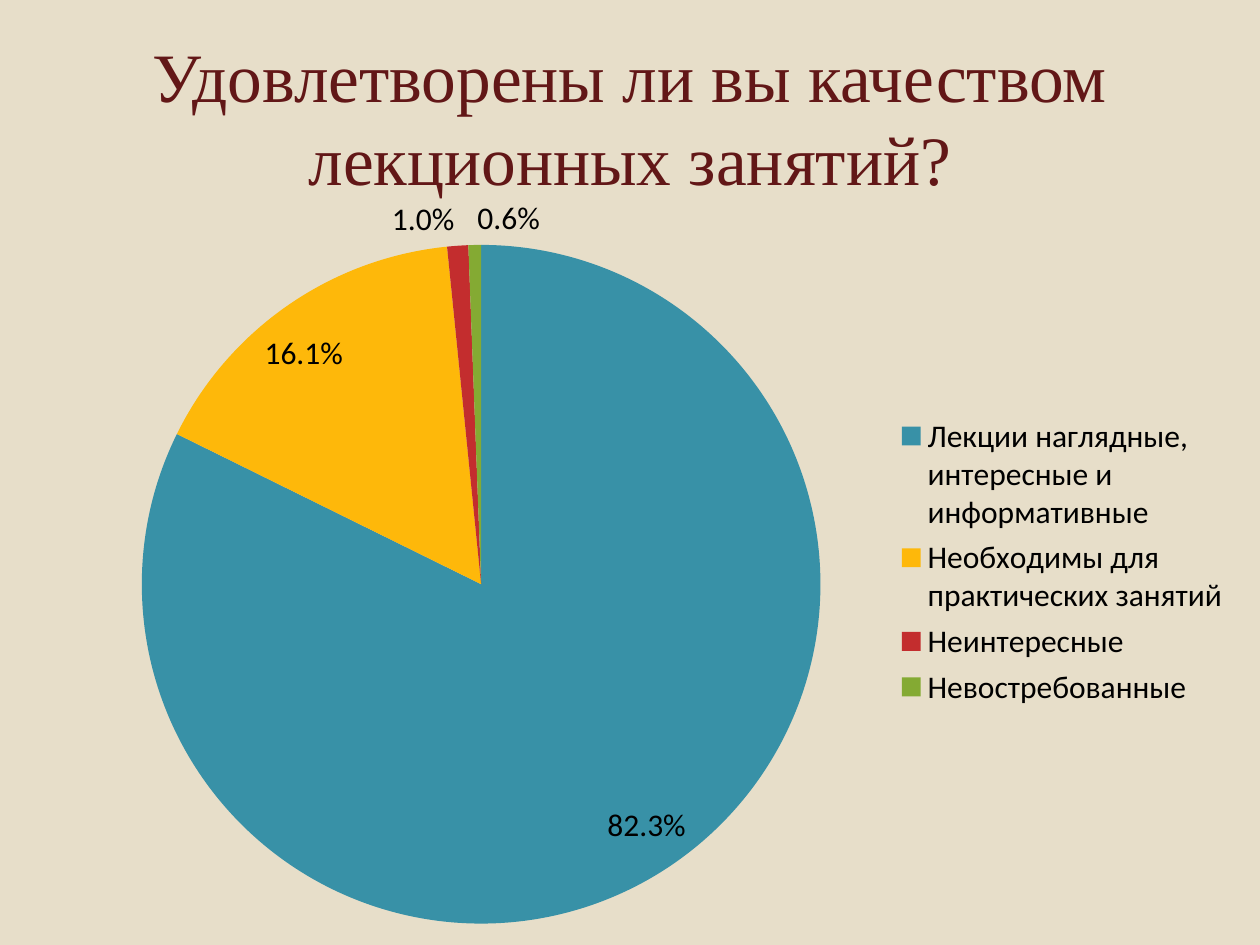
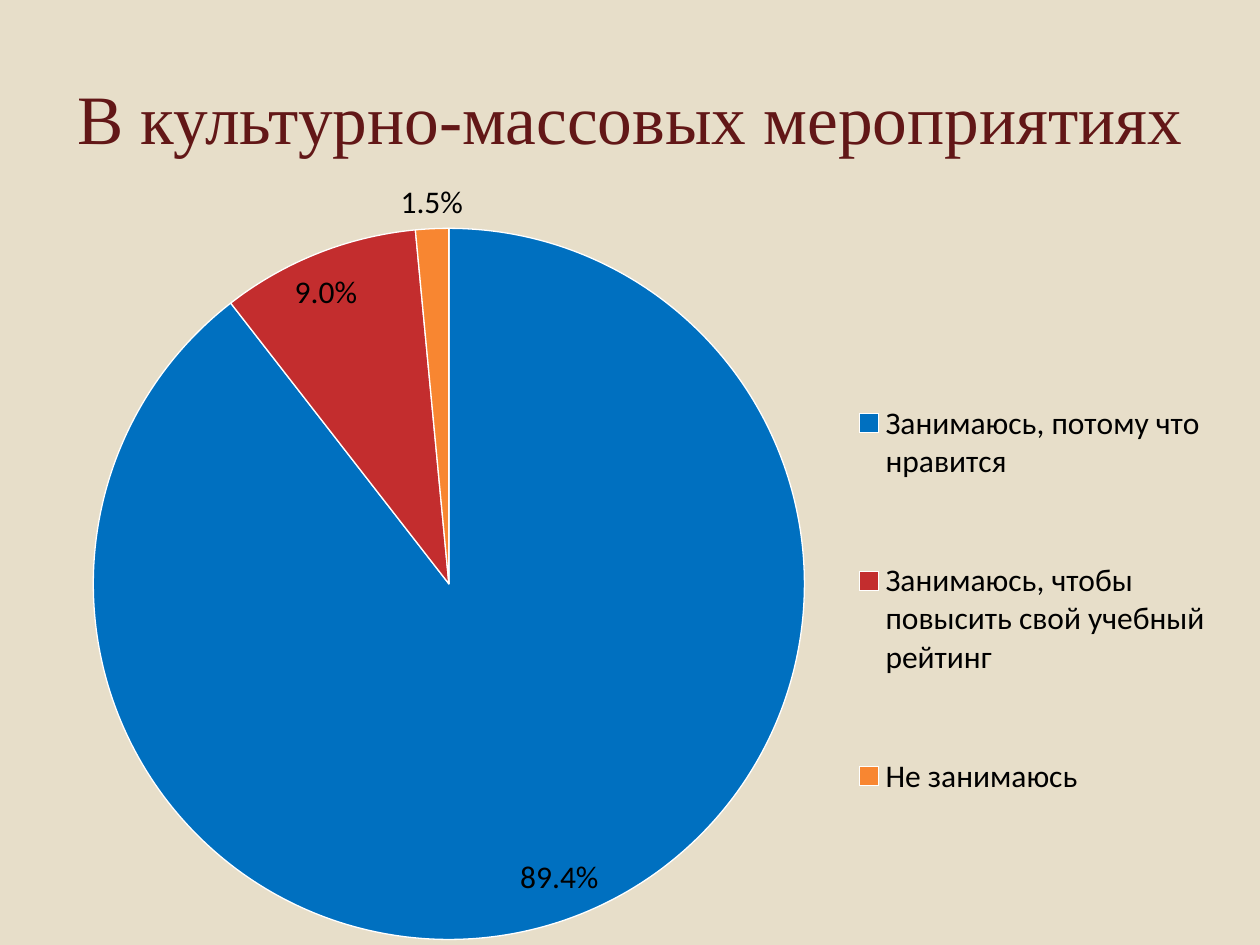
from lxml.etree import SubElement
from pptx import Presentation
from pptx.chart.data import CategoryChartData
from pptx.dml.color import RGBColor
from pptx.enum.chart import XL_CHART_TYPE, XL_LABEL_POSITION, XL_LEGEND_POSITION
from pptx.enum.text import MSO_ANCHOR, PP_ALIGN
from pptx.oxml.ns import qn
from pptx.util import Cm, Pt

BACKGROUND = "E7DEC9"
TITLE_COLOR = "621717"
CHART_TEXT = "000000"
SLICE_BORDER = "FFFFFF"

SURVEYS = [
    {
        "title": "Удовлетворены ли вы качеством лекционных занятий?",
        "frame": (1.7, 3.66, 23.19, 15.32),
        "answers": [
            ("Лекции наглядные, интересные и информативные", 82.3, "3891A7"),
            ("Необходимы для практических занятий", 16.1, "FEB80A"),
            ("Неинтересные", 1, "C32D2E"),
            ("Невостребованные", 0.6, "84AA33"),
        ],
        "bordered": False,
        "pie_area": (0.05, 0.08, 0.59, 0.9),
        "legend_area": (0.7, 0.3, 0.3, 0.4),
    },
    {
        "title": "В культурно-массовых мероприятиях",
        "frame": (0.89, 3.33, 24, 15.93),
        "answers": [
            ("Занимаюсь, потому что нравится", 89.4, "0070C0"),
            ("Занимаюсь, чтобы повысить свой учебный рейтинг", 9, "C32D2E"),
            ("Не занимаюсь", 1.5, "F88631"),
        ],
        "bordered": True,
        "pie_area": (0.04, 0.08, 0.6, 0.9),
        "legend_area": (0.67, 0.2, 0.32, 0.7),
    },
]


def add_text(page, text, left, top, width, height, size, font, color):
    box = page.shapes.add_textbox(Cm(left), Cm(top), Cm(width), Cm(height))
    frame = box.text_frame
    frame.word_wrap = True
    frame.margin_left = frame.margin_right = 0
    frame.vertical_anchor = MSO_ANCHOR.MIDDLE
    para = frame.paragraphs[0]
    para.alignment = PP_ALIGN.CENTER
    span = para.add_run()
    span.text = text
    span.font.size = Pt(size)
    span.font.name = font
    span.font.color.rgb = RGBColor.from_string(color)


def set_layout(layout, area, inner=False):
    manual = SubElement(layout, qn("c:manualLayout"))
    settings = [("layoutTarget", "inner")] if inner else []
    settings += [("xMode", "edge"), ("yMode", "edge"), *zip("xywh", area)]
    for name, value in settings:
        SubElement(manual, qn(f"c:{name}")).set("val", str(value))


deck = Presentation()
deck.slide_width = Cm(25.4)
deck.slide_height = Cm(19.05)

for survey in SURVEYS:
    page = deck.slides.add_slide(deck.slide_layouts[6])
    page.background.fill.solid()
    page.background.fill.fore_color.rgb = RGBColor.from_string(BACKGROUND)

    names, shares, colors = zip(*survey["answers"])
    data = CategoryChartData(number_format="0.0")
    data.categories = names
    data.add_series("Series 1", shares)
    frame = [Cm(length) for length in survey["frame"]]
    chart = page.shapes.add_chart(XL_CHART_TYPE.PIE, *frame, data).chart
    chart.has_title = False
    chart.font.size = Pt(18)
    chart.font.name = "Calibri"
    chart.font.color.rgb = RGBColor.from_string(CHART_TEXT)

    chart.has_legend = True
    chart.legend.position = XL_LEGEND_POSITION.RIGHT
    chart.legend.include_in_layout = False

    plot = chart.plots[0]
    plot.vary_by_categories = True
    plot.has_data_labels = True
    labels = plot.data_labels
    labels.show_value = True
    labels.show_percentage = False
    labels.number_format = '0.0"%"'
    labels.number_format_is_linked = False
    labels.position = XL_LABEL_POSITION.BEST_FIT

    for index, color in enumerate(colors):
        part = plot.series[0].points[index].format
        part.fill.solid()
        part.fill.fore_color.rgb = RGBColor.from_string(color)
        if survey["bordered"]:
            part.line.color.rgb = RGBColor.from_string(SLICE_BORDER)
            part.line.width = Pt(0.75)
        else:
            part.line.fill.background()

    plot_area = chart._chartSpace.chart.plotArea
    pie_layout = plot_area.find(qn("c:layout"))
    if pie_layout is None:
        pie_layout = SubElement(plot_area, qn("c:layout"))
        plot_area.insert(0, pie_layout)
    set_layout(pie_layout, survey["pie_area"], inner=True)

    legend = chart.legend._element
    legend_layout = legend.find(qn("c:layout"))
    if legend_layout is None:
        legend_layout = SubElement(legend, qn("c:layout"))
        legend.find(qn("c:legendPos")).addnext(legend_layout)
    set_layout(legend_layout, survey["legend_area"])

    add_text(page, survey["title"], left=1.27, top=0.76, width=22.86, height=3.18,
             size=39.6, font="Times New Roman", color=TITLE_COLOR)

deck.save("out.pptx")
